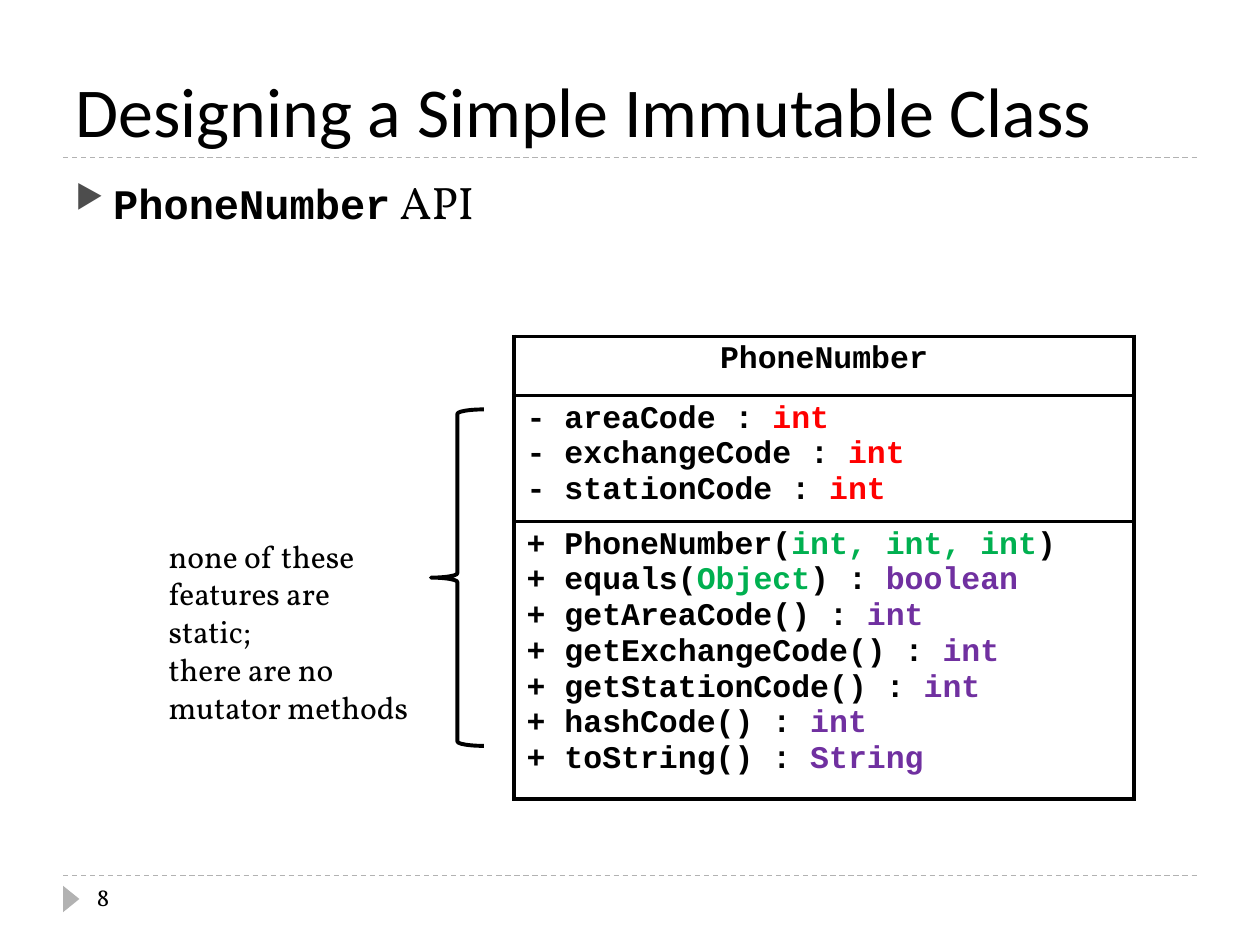
from dataclasses import dataclass

from lxml import etree
from pptx import Presentation
from pptx import util as u
from pptx.dml import color
from pptx.enum import dml, shapes, text
from pptx.oxml import ns

BLACK, GREY, BULLET = "000000", "B2B2B2", "4D4D4D"
RED, GREEN, PURPLE = "FF0000", "00B050", "7030A0"
CODE, SERIF, SANS = "Courier New", "Vollkorn", "Calibri"


@dataclass(frozen=True)
class Span:
    words: str
    color: str = BLACK
    font: str = CODE
    size: float = 18
    bold: bool = True


@dataclass(frozen=True)
class Compartment:
    height: float
    lines: list[list[Span]]
    align: text.PP_ALIGN = text.PP_ALIGN.LEFT


def rgb(value: str) -> color.RGBColor:
    return color.RGBColor.from_string(value)


def add_xml(parent, tag: str, **attributes: str):
    return etree.SubElement(parent, ns.qn(tag), attributes)


def write(frame, lines: list[list[Span]], align=text.PP_ALIGN.LEFT) -> None:
    for index, spans in enumerate(lines):
        paragraph = frame.add_paragraph() if index else frame.paragraphs[0]
        paragraph.alignment = align
        for span in spans:
            run = paragraph.add_run()
            run.text = span.words
            run.font.name = span.font
            run.font.size = u.Pt(span.size)
            run.font.bold = span.bold
            run.font.color.rgb = rgb(span.color)


def add_text(slide, left: float, top: float, width: float, height: float,
             lines: list[list[Span]]):
    box = slide.shapes.add_textbox(*map(u.Inches, (left, top, width, height)))
    box.text_frame.word_wrap = True
    write(box.text_frame, lines)
    return box.text_frame


def add_rule(slide, y: float) -> None:
    rule = slide.shapes.add_connector(
        shapes.MSO_CONNECTOR.STRAIGHT,
        u.Inches(0.5), u.Inches(y), u.Inches(9.5), u.Inches(y))
    rule.line.color.rgb = rgb(GREY)
    rule.line.width = u.Pt(0.75)
    rule.line.dash_style = dml.MSO_LINE.DASH
    add_xml(rule._element.spPr, "a:effectLst")


def add_bullet(paragraph) -> None:
    paragraph.space_before = u.Pt(6)
    properties = paragraph._p.get_or_add_pPr()
    properties.set("marL", str(u.Inches(0.3)))
    properties.set("indent", str(-u.Inches(0.3)))
    add_xml(add_xml(properties, "a:buClr"), "a:srgbClr", val=BULLET)
    add_xml(properties, "a:buSzPct", val="76000")
    add_xml(properties, "a:buChar", char="▶")


def outline_cell(cell) -> None:
    properties = cell._tc.get_or_add_tcPr()
    for side in ("L", "R", "T", "B"):
        border = add_xml(properties, f"a:ln{side}", w=str(u.Pt(2.25)))
        add_xml(add_xml(border, "a:solidFill"), "a:srgbClr", val=BLACK)
    cell.fill.background()


def add_class_diagram(slide, compartments: list[Compartment]) -> None:
    height = sum(part.height for part in compartments)
    diagram = slide.shapes.add_table(
        len(compartments), 1, u.Inches(4.08), u.Inches(2.67),
        u.Inches(4.92), u.Inches(height)).table
    diagram.first_row = diagram.horz_banding = False
    for index, part in enumerate(compartments):
        diagram.rows[index].height = u.Inches(part.height)
        cell = diagram.cell(index, 0)
        write(cell.text_frame, part.lines, part.align)
        outline_cell(cell)


def field(name: str) -> list[Span]:
    return [Span(f"- {name} : "), Span("int", RED)]


def method(name: str, result: str) -> list[Span]:
    return [Span(f"+ {name}() : "), Span(result, PURPLE)]


def main() -> None:
    deck = Presentation()
    deck.slide_width, deck.slide_height = u.Inches(10), u.Inches(7.5)
    slide = deck.slides.add_slide(deck.slide_layouts[5])

    for y in (6.95, 1.25):
        add_rule(slide, y)

    marker = slide.shapes.add_shape(
        shapes.MSO_SHAPE.ISOSCELES_TRIANGLE,
        u.Inches(0.46), u.Inches(7.07), u.Inches(0.21), u.Inches(0.13))
    marker.rotation = 90
    marker.shadow.inherit = False
    marker.fill.solid()
    marker.fill.fore_color.rgb = rgb(GREY)
    marker.line.fill.background()

    title = slide.shapes.title
    title.left, title.top = u.Inches(0.5), u.Inches(0.17)
    title.width, title.height = u.Inches(9), u.Inches(1.08)
    title.text_frame.vertical_anchor = text.MSO_ANCHOR.BOTTOM
    write(title.text_frame,
          [[Span("Designing a Simple Immutable Class", font=SANS, size=40, bold=False)]])

    add_text(slide, 0.67, 6.95, 2.17, 0.4,
             [[Span("8", font=SERIF, size=14, bold=False)]])

    topic = add_text(slide, 0.5, 1.33, 9, 5.4, [[
        Span("PhoneNumber", size=24),
        Span(" API", font=SERIF, size=26, bold=False)]])
    add_bullet(topic.paragraphs[0])

    add_class_diagram(slide, [
        Compartment(0.47, [[Span("PhoneNumber")]], text.PP_ALIGN.CENTER),
        Compartment(0.95, [field(name) for name in
                           ("areaCode", "exchangeCode", "stationCode")]),
        Compartment(2.08, [
            [Span("+ PhoneNumber("), Span("int, int, int", GREEN), Span(")")],
            [Span("+ equals("), Span("Object", GREEN), Span(") : "),
             Span("boolean", PURPLE)],
            method("getAreaCode", "int"),
            method("getExchangeCode", "int"),
            method("getStationCode", "int"),
            method("hashCode", "int"),
            method("toString", "String")]),
    ])

    brace = slide.shapes.add_shape(
        shapes.MSO_SHAPE.LEFT_BRACE,
        u.Inches(3.42), u.Inches(3.25), u.Inches(0.42), u.Inches(2.67))
    brace.shadow.inherit = False
    brace.fill.background()
    brace.line.color.rgb = rgb(BLACK)
    brace.line.width = u.Pt(2.25)

    remarks = ("none of these", "features are static;", "there are no", "mutator methods")
    add_text(slide, 1.24, 4.21, 2.16, 1.31,
             [[Span(remark, font=SERIF, bold=False)] for remark in remarks])

    deck.save("out.pptx")


if __name__ == "__main__":
    main()
